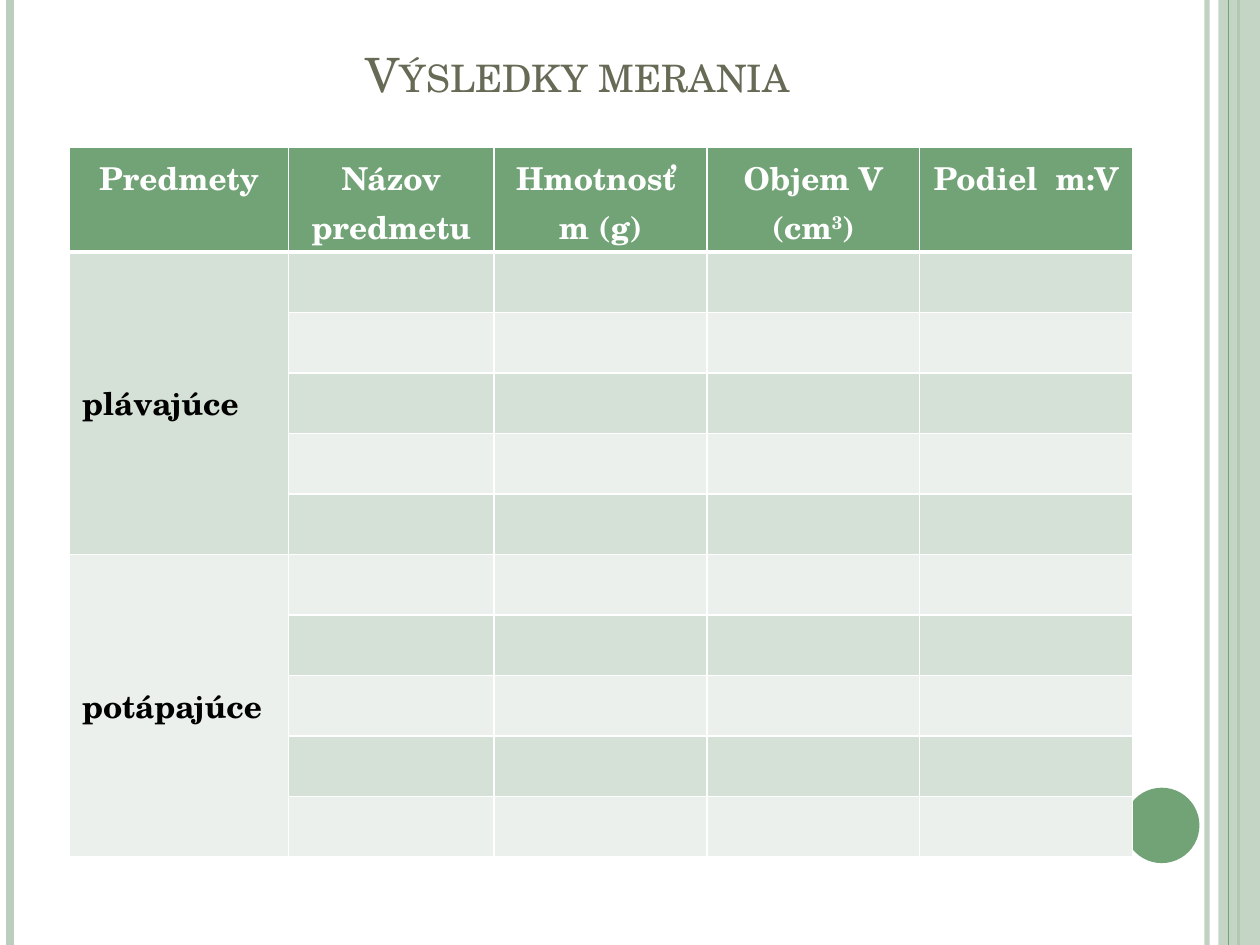
import pptx
import pptx.dml.color
import pptx.enum.shapes
import pptx.enum.text
import pptx.oxml
import pptx.oxml.ns
import pptx.util
from lxml import etree

Cm, Pt = pptx.util.Cm, pptx.util.Pt
ALIGN = pptx.enum.text.PP_ALIGN
ANCHOR = pptx.enum.text.MSO_ANCHOR
SHAPE = pptx.enum.shapes.MSO_SHAPE
qn = pptx.oxml.ns.qn

FONT = "TeX Gyre Schola"
GREEN, PALE_GREEN = "72A376", "BCCEBD"
BANDS = ["D5E0D6", "EBF0EC"]
WIDTH, HEIGHT = 25.4, 19.05

HEADERS = [
    ["Predmety"],
    ["Názov predmetu"],
    ["Hmotnosť  m (g)"],
    ["Objem V (cm", "3", ")"],
    ["Podiel  m:V"],
]
GROUPS = ["plávajúce", "potápajúce"]
GROUP_ROWS = 5
COL_WIDTHS = [4.42, 4.14, 4.29, 4.29, 4.29]
HEADER_HEIGHT, ROW_HEIGHT = 2.11, 1.22


def rgb(color):
    return pptx.dml.color.RGBColor.from_string(color)


def set_fill(fill, color, alpha=100):
    fill.solid()
    fill.fore_color.rgb = rgb(color)
    if alpha < 100:
        clr = fill._xPr.find(".//" + qn("a:srgbClr"))
        etree.SubElement(clr, qn("a:alpha"), val=str(alpha * 1000))


def add_run(p, text, size=18, color="000000", bold=False, small_caps=False,
            superscript=False):
    r = p.add_run()
    r.text = text
    r.font.name, r.font.size, r.font.bold = FONT, Pt(size), bold
    r.font.color.rgb = rgb(color)
    rPr = r.font._element
    if small_caps:
        rPr.set("cap", "small")
    if superscript:
        rPr.set("baseline", "30000")


def add_vertical_line(s, x, color, width, alpha=100):
    line = s.shapes.add_connector(
        pptx.enum.shapes.MSO_CONNECTOR.STRAIGHT, Cm(x), 0, Cm(x), Cm(HEIGHT))
    line.line.width = Pt(width)
    set_fill(line.line.fill, color, alpha)
    etree.SubElement(line._element.spPr, qn("a:effectLst"))


def add_plain_shape(s, kind, x, y, w, h, color, alpha=100):
    sp = s.shapes.add_shape(kind, Cm(x), Cm(y), Cm(w), Cm(h))
    sp.shadow.inherit = False
    sp.line.fill.background()
    set_fill(sp.fill, color, alpha)


def add_title(s, text):
    sp = s.shapes.add_textbox(Cm(1.27), Cm(0.76), Cm(20.75), Cm(1.42))
    tf = sp.text_frame
    tf.word_wrap = True
    tf.vertical_anchor = ANCHOR.BOTTOM
    p = tf.paragraphs[0]
    p.alignment = ALIGN.CENTER
    add_run(p, text, size=27, color="676A55", small_caps=True)


def style_cell(cell, color, bottom=1):
    """Draw white borders round the cell and fill it."""
    tcPr = cell._tc.get_or_add_tcPr()
    for side, width in zip("LRTB", [1, 1, 1, bottom]):
        ln = etree.SubElement(tcPr, qn("a:ln" + side), w=str(Pt(width)))
        fill = etree.SubElement(ln, qn("a:solidFill"))
        etree.SubElement(fill, qn("a:srgbClr"), val="FFFFFF")
    set_fill(cell.fill, color)


def add_results_table(s):
    n_rows = 1 + GROUP_ROWS * len(GROUPS)
    table = s.shapes.add_table(
        n_rows, len(HEADERS), Cm(1.4), Cm(2.97), Cm(sum(COL_WIDTHS)),
        Cm(HEADER_HEIGHT + ROW_HEIGHT * (n_rows - 1))).table
    for col, width in zip(table.columns, COL_WIDTHS):
        col.width = Cm(width)
    for i, row in enumerate(table.rows):
        row.height = Cm(ROW_HEIGHT if i else HEADER_HEIGHT)
        for cell in row.cells:
            if i == 0:
                style_cell(cell, GREEN, bottom=3)
            else:
                style_cell(cell, BANDS[(i - 1) % 2])

    for cell, parts in zip(table.rows[0].cells, HEADERS):
        p = cell.text_frame.paragraphs[0]
        p.alignment = ALIGN.CENTER
        for part in parts:
            add_run(p, part, color="FFFFFF", bold=True, superscript=part == "3")

    for i, name in enumerate(GROUPS):
        first = 1 + i * GROUP_ROWS
        cell = table.cell(first, 0)
        cell.merge(table.cell(first + GROUP_ROWS - 1, 0))
        cell.vertical_anchor = ANCHOR.MIDDLE
        add_run(cell.text_frame.paragraphs[0], name, bold=True)


def main():
    prs = pptx.Presentation()
    prs.slide_width, prs.slide_height = Cm(WIDTH), Cm(HEIGHT)
    s = prs.slides.add_slide(prs.slide_layouts[6])

    add_vertical_line(s, 24.33, PALE_GREEN, 3, alpha=93)
    add_vertical_line(s, 0.21, PALE_GREEN, 4.5)
    add_vertical_line(s, 24.97, GREEN, 1.5)
    add_plain_shape(s, SHAPE.RECTANGLE, 24.56, 0, 0.84, HEIGHT, PALE_GREEN, alpha=87)
    add_vertical_line(s, 24.77, GREEN, 0.75)
    add_plain_shape(s, SHAPE.OVAL, 22.66, 15.88, 1.52, 1.52, GREEN)
    add_title(s, "Výsledky merania")
    add_results_table(s)

    prs.save("out.pptx")


if __name__ == "__main__":
    main()
